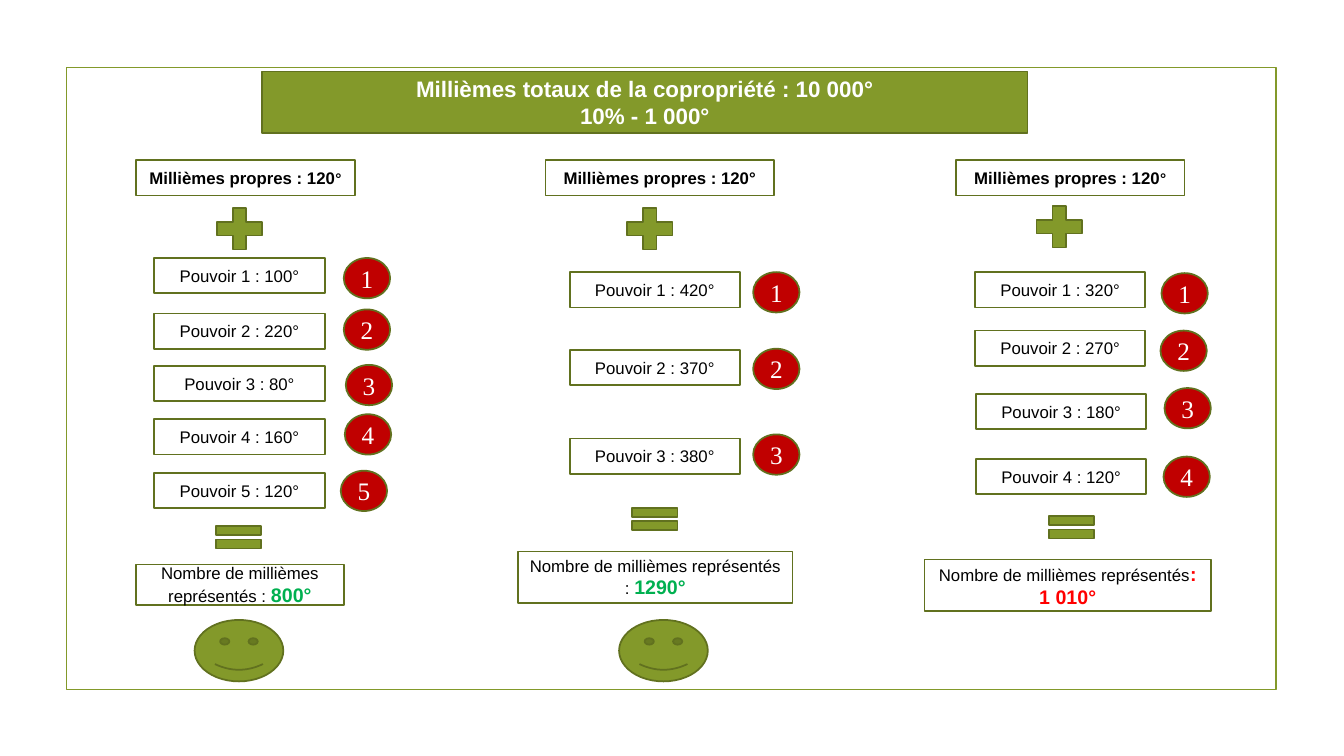
from dataclasses import dataclass
from typing import NamedTuple

from pptx import Presentation
from pptx.dml.color import RGBColor
from pptx.enum.shapes import MSO_SHAPE
from pptx.enum.text import MSO_ANCHOR, MSO_AUTO_SIZE, PP_ALIGN
from pptx.util import Pt

EMU_PER_PX = 9144


@dataclass(frozen=True)
class Theme:
    green: str = "83992A"
    outline: str = "61711F"
    white: str = "FFFFFF"
    black: str = "000000"
    disc: str = "C00000"
    valid: str = "00B050"
    exceeded: str = "FF0000"
    sans: str = "Arial"
    serif: str = "Times New Roman"
    title_size: int = 16
    text_size: int = 12
    degree_size: int = 11
    total_size: int = 14
    disc_size: int = 18
    line_width: float = 1.25


THEME = Theme()


class Box(NamedTuple):
    left: int
    top: int
    width: int
    height: int

    def inside(self, left, top, width, height):
        return Box(self.left + left, self.top + top, width, height)

    def emu(self):
        return [px * EMU_PER_PX for px in self]


class Power(NamedTuple):
    amount: int
    label_at: tuple
    disc_at: tuple


@dataclass(frozen=True)
class Owner:
    box: Box
    degree_size: int
    plus_at: tuple
    powers: list
    equal_at: tuple
    total_box: tuple
    total_runs: tuple
    total_color: str
    smiley_at: tuple = None


OWNERS = [
    Owner(
        Box(135, 159, 217, 517), THEME.degree_size, (72, 40),
        [
            Power(100, (18, 97), (206, 97)),
            Power(220, (18, 152), (206, 148)),
            Power(80, (18, 204), (208, 203)),
            Power(160, (18, 257), (207, 252)),
            Power(120, (18, 310), (203, 308)),
        ],
        (71, 355), (0, 401, 206, 40), (" : ", "800°"), THEME.valid, (58, 456),
    ),
    Owner(
        Box(541, 159, 227, 517), THEME.text_size, (73, 40),
        [
            Power(420, (24, 111), (206, 111)),
            Power(370, (24, 188), (206, 187)),
            Power(380, (24, 276), (206, 272)),
        ],
        (78, 337), (-27, 388, 272, 51), (" : ", "1290°"), THEME.valid, (73, 456),
    ),
    Owner(
        Box(948, 159, 227, 517), THEME.degree_size, (72, 38),
        [
            Power(320, (19, 111), (204, 112)),
            Power(270, (19, 169), (203, 169)),
            Power(180, (20, 232), (207, 226)),
            Power(120, (20, 296), (206, 294)),
        ],
        (84, 345), (-31, 396, 284, 51), ("", ": 1 010°"), THEME.exceeded,
    ),
]


def paint(shape, fill, line=THEME.outline):
    if fill:
        shape.fill.solid()
        shape.fill.fore_color.rgb = RGBColor.from_string(fill)
    else:
        shape.fill.background()
    shape.line.color.rgb = RGBColor.from_string(line)
    shape.line.width = Pt(THEME.line_width)


def add_figure(slide, kind, box, fill=THEME.green, line=THEME.outline):
    shape = slide.shapes.add_shape(kind, *box.emu())
    shape.shadow.inherit = False
    paint(shape, fill, line)
    return shape


def write(paragraph, text, size=THEME.text_size, color=THEME.black,
          font=THEME.sans, bold=False):
    paragraph.alignment = PP_ALIGN.CENTER
    run = paragraph.add_run()
    run.text = text
    run.font.size = Pt(size)
    run.font.name = font
    run.font.bold = bold
    run.font.color.rgb = RGBColor.from_string(color)


def add_label(slide, box):
    shape = add_figure(slide, MSO_SHAPE.RECTANGLE, box, THEME.white)
    return shape.text_frame.paragraphs[0]


def add_title(slide, box):
    title = slide.shapes.title
    title.left, title.top, title.width, title.height = box.emu()
    paint(title, THEME.green)
    frame = title.text_frame
    frame.auto_size = MSO_AUTO_SIZE.NONE
    frame.word_wrap = True
    frame.vertical_anchor = MSO_ANCHOR.MIDDLE
    style = dict(size=THEME.title_size, color=THEME.white, bold=True)
    write(frame.paragraphs[0], "Millièmes totaux de la copropriété : 10 000°", **style)
    write(frame.add_paragraph(), "10% - 1 000°", **style)


def add_power(slide, box, number, power):
    label = add_label(slide, box.inside(*power.label_at, 169, 35))
    write(label, f"Pouvoir {number} : {power.amount}°")
    disc = add_figure(slide, MSO_SHAPE.OVAL,
                      box.inside(*power.disc_at, 46, 40), THEME.disc)
    write(disc.text_frame.paragraphs[0], str(number), size=THEME.disc_size,
          color=THEME.white, font=THEME.serif)


def add_owner(slide, owner):
    box = owner.box
    own_share = add_label(slide, box.inside(0, 0, box.width, 35))
    write(own_share, "Millièmes propres : 120", bold=True)
    write(own_share, "°", size=owner.degree_size, bold=True)
    add_figure(slide, MSO_SHAPE.MATH_PLUS, box.inside(*owner.plus_at, 61, 56))
    for number, power in enumerate(owner.powers, 1):
        add_power(slide, box, number, power)
    add_figure(slide, MSO_SHAPE.MATH_EQUAL, box.inside(*owner.equal_at, 61, 38))
    separator, amount = owner.total_runs
    total = add_label(slide, box.inside(*owner.total_box))
    write(total, "Nombre de millièmes représentés" + separator)
    write(total, amount, size=THEME.total_size, color=owner.total_color, bold=True)
    if owner.smiley_at:
        add_figure(slide, MSO_SHAPE.SMILEY_FACE, box.inside(*owner.smiley_at, 88, 61))


def main():
    presentation = Presentation()
    presentation.slide_width = 1333 * EMU_PER_PX
    presentation.slide_height = 750 * EMU_PER_PX
    slide = presentation.slides.add_slide(presentation.slide_layouts[5])
    page = Box(66, 67, 1200, 617)
    add_figure(slide, MSO_SHAPE.RECTANGLE, page, None, THEME.green)
    add_title(slide, page.inside(194, 4, 759, 61))
    for owner in OWNERS:
        add_owner(slide, owner)
    presentation.save("out.pptx")


if __name__ == "__main__":
    main()
